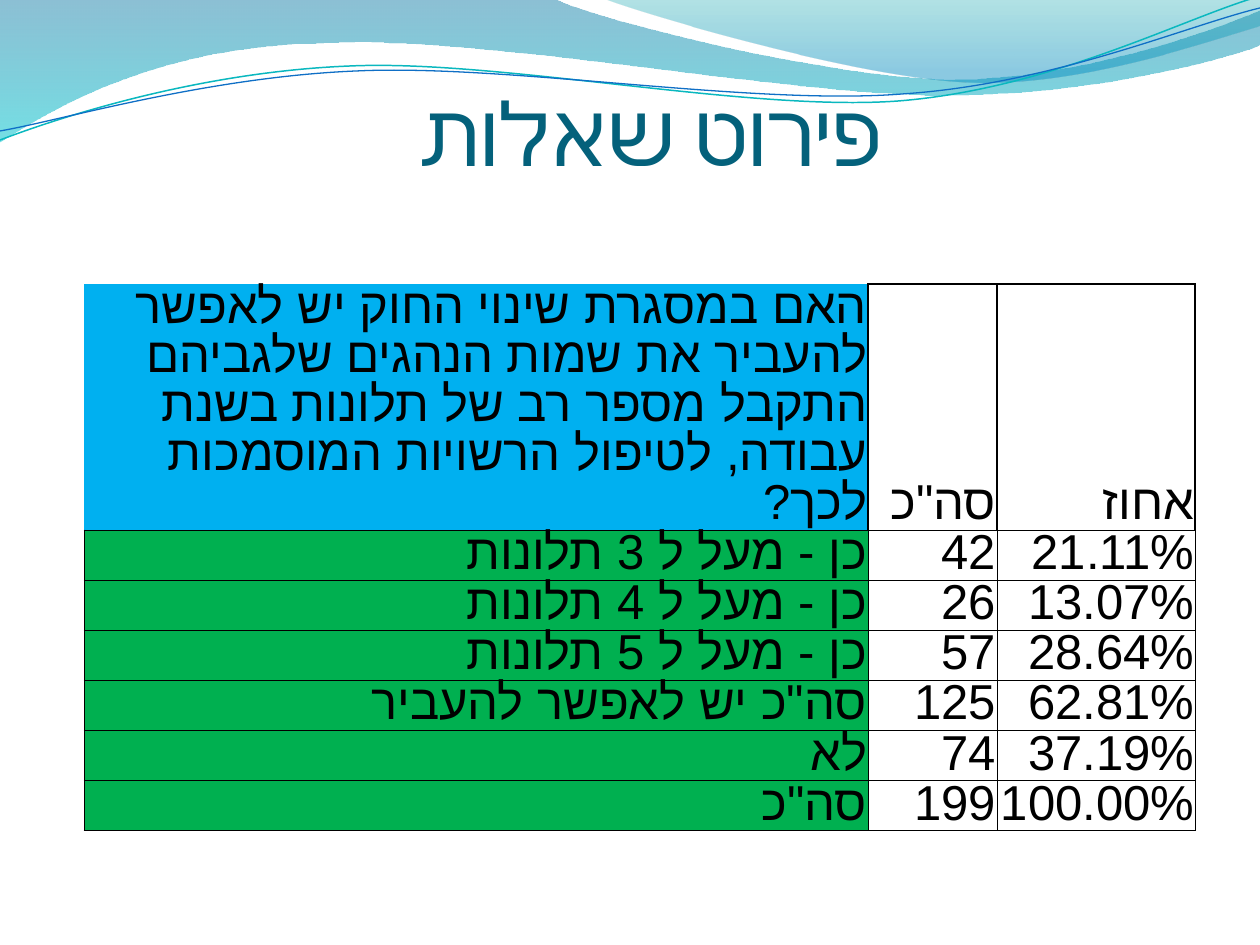
"""Build a slide with a wave banner, a title and a survey table."""
from lxml import etree
from pptx import Presentation, util as u
from pptx.dml.color import RGBColor
from pptx.enum import text as t
from pptx.oxml import parse_xml
from pptx.oxml.ns import nsdecls, qn

PX = 914400 / 126
INK = {"title": "04617B", "text": "000000", "head": "00B0F0", "label": "00B050",
       "teal": "0AB8BF", "blue": "0F6FC6"}
WAVES = [
    ([(0, 0), (554, -1), (600, 21, 837, 79, 955, 79), (1075, 79, 1207, 33, 1260, 11),
      (1261, 45), (1239, 55, 1096, 96, 940, 95), (784, 95, 481, 35, 324, 43),
      (163, 45, 58, 105, -1, 142), (0, 0)], [(0, "0074A1", 45), (100, "00C6CF", 55)]),
    ([(604, -1), (641, 14, 859, 78, 969, 82), (1079, 87, 1211, 40, 1260, 26),
      (1260, 0), (604, -1)], [(0, "00A1A9", 30), (80, "008BBF", 45)]),
]
LINES = [
    ([(0, 140), (60, 117, 199, 72, 349, 66), (498, 59, 747, 112, 898, 101),
      (1050, 89, 1182, 19, 1257, -3)], "teal", 0.85),
    ([(0, 131), (59, 121, 207, 77, 357, 71), (508, 64, 752, 106, 903, 94),
      (1053, 84, 1186, 26, 1260, 8)], "blue", 0.75),
]
ROWS = [
    ("האם במסגרת שינוי החוק יש לאפשר להעביר את שמות הנהגים שלגביהם התקבל מספר רב "
     "של תלונות בשנת עבודה, לטיפול הרשויות המוסמכות לכך?", 'סה"כ', "אחוז"),
    ("כן - מעל ל 3 תלונות", "42", "21.11%"),
    ("כן - מעל ל 4 תלונות", "26", "13.07%"),
    ("כן - מעל ל 5 תלונות", "57", "28.64%"),
    ('סה"כ יש לאפשר להעביר', "125", "62.81%"),
    ("לא", "74", "37.19%"),
    ('סה"כ', "199", "100.00%"),
]
COLS = [784, 129, 198]
HEAD, STEP = 246, 50


def px(num):
    """Turn pixels into EMU."""
    return u.Emu(round(num * PX))


def apply(obj, vals):
    """Set each named attribute of an object."""
    for name, val in vals.items():
        setattr(obj, name, val)


def bend(shape, parts):
    """Join each three corners of a cubic part into one curve."""
    legs = iter(list(shape.element.iter(qn("a:lnTo"))))
    for part in parts[1:]:
        trio = [next(legs) for _ in range(len(part) // 2)]
        if len(trio) == 3:
            trio[0].tag = qn("a:cubicBezTo")
            for leg in trio[1:]:
                trio[0].append(leg[0])
                leg.getparent().remove(leg)


def outline(slide, parts, close):
    """Draw a freeform of straight and cubic parts."""
    pts = [(px(p[i]), px(p[i + 1])) for p in parts for i in range(0, len(p), 2)]
    pen = slide.shapes.build_freeform(*pts[0])
    pen.add_line_segments(pts[1:], close=close)
    shape = pen.convert_to_shape()
    bend(shape, parts)
    shape.shadow.inherit = False
    shape.fill.background()
    return shape


def wave(slide, parts, stops):
    """Draw a band with a see-through downward gradient."""
    shape = outline(slide, parts, True)
    shape.line.fill.background()
    marks = "".join(
        f'<a:gs pos="{pos * 1000}"><a:srgbClr val="{ink}">'
        f'<a:alpha val="{clear * 1000}"/></a:srgbClr></a:gs>'
        for pos, ink, clear in stops)
    grad = parse_xml(f'<a:gradFill {nsdecls("a")}><a:gsLst>{marks}</a:gsLst>'
                     '<a:lin ang="5400000" scaled="0"/></a:gradFill>')
    props = shape.element.spPr
    props.replace(props.find(qn("a:noFill")), grad)


def curve(slide, parts, ink, width):
    """Draw an open curved line."""
    line = outline(slide, parts, False).line
    line.color.rgb = RGBColor.from_string(INK[ink])
    line.width = u.Pt(width)


def write(frame, words, align, size, face, ink):
    """Write one right-to-left paragraph."""
    para = frame.paragraphs[0]
    para.alignment = align
    para._p.get_or_add_pPr().set("rtl", "1")
    run = para.add_run()
    run.text = words
    apply(run.font, {"size": u.Pt(size), "name": face})
    run.font.color.rgb = RGBColor.from_string(INK[ink])
    etree.SubElement(run._r.rPr, qn("a:cs"), typeface=face)
    return para


def title(slide, words):
    """Add the slide title."""
    frame = slide.shapes.add_textbox(px(84), px(26), px(1134), px(158)).text_frame
    apply(frame, {"word_wrap": True, "vertical_anchor": t.MSO_ANCHOR.BOTTOM,
                  "margin_left": 0, "margin_right": 0,
                  "margin_top": px(6), "margin_bottom": 0})
    write(frame, words, t.PP_ALIGN.CENTER, 50, "Calibri", "title")


def border(cell, sides):
    """Draw cell edges from a map of side to width in points."""
    props = cell._tc.get_or_add_tcPr()
    for k, side in enumerate("LRTB"):
        wide = sides.get(side, 0)
        paint = f'<a:solidFill><a:srgbClr val="{INK["text"]}"/></a:solidFill>'
        props.insert(k, parse_xml(
            f'<a:ln{side} {nsdecls("a")} w="{int(u.Pt(wide))}">'
            f'{paint if wide else "<a:noFill/>"}</a:ln{side}>'))


def fill(cell, words, row, col):
    """Fill in one table cell."""
    apply(cell, {"vertical_anchor": t.MSO_ANCHOR.BOTTOM, "margin_left": px(1),
                 "margin_right": px(1), "margin_top": px(1), "margin_bottom": 0})
    para = write(cell.text_frame, words, t.PP_ALIGN.RIGHT, 28, "Arial", "text")
    para.line_spacing = u.Pt(28)
    if col:
        cell.fill.background()
    else:
        cell.fill.solid()
        cell.fill.fore_color.rgb = RGBColor.from_string(INK["label" if row else "head"])
    if row:
        border(cell, dict.fromkeys("LRTB", 0.5))
    elif col:
        border(cell, {"L": 1, "R": 1, "T": 1, "B": 0.5})
    else:
        border(cell, {"R": 1, "B": 0.5})


def grid(slide):
    """Add the survey table."""
    high = [HEAD] + [STEP] * (len(ROWS) - 1)
    table = slide.shapes.add_table(len(ROWS), len(COLS), px(84), px(284),
                                   px(sum(COLS)), px(sum(high))).table
    apply(table, {"first_row": False, "horz_banding": False})
    for col, wide in zip(table.columns, COLS):
        col.width = px(wide)
    for i, words in enumerate(ROWS):
        table.rows[i].height = px(high[i])
        for j, word in enumerate(words):
            fill(table.cell(i, j), word, i, j)


def main():
    """Build and save the slide."""
    deck = Presentation()
    apply(deck, {"slide_width": px(1260), "slide_height": px(945)})
    slide = deck.slides.add_slide(deck.slide_layouts[6])
    for parts, stops in WAVES:
        wave(slide, parts, stops)
    for parts, ink, width in LINES:
        curve(slide, parts, ink, width)
    title(slide, "פירוט שאלות")
    grid(slide)
    deck.save("out.pptx")


if __name__ == "__main__":
    main()
